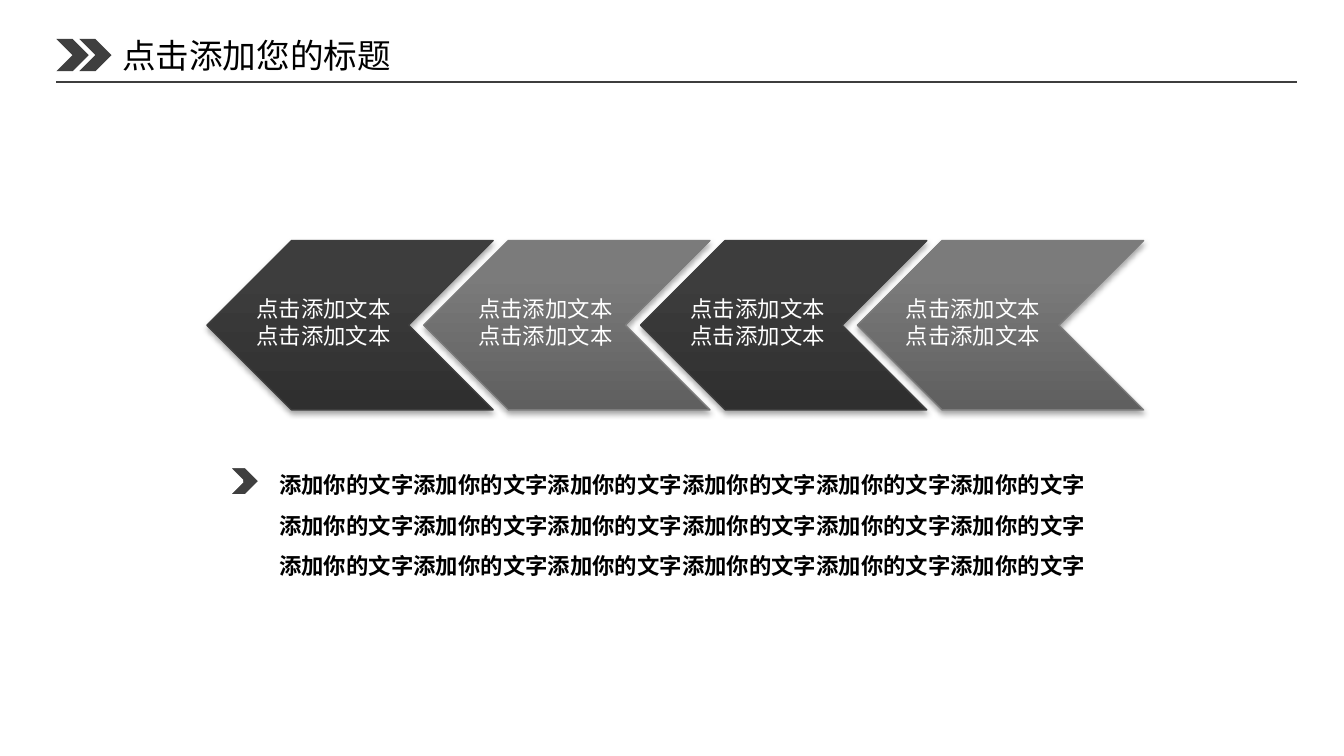
from lxml.etree import SubElement
from pptx import Presentation
from pptx.dml.color import RGBColor
from pptx.enum.shapes import MSO_CONNECTOR as Connector, MSO_SHAPE as Shape
from pptx.enum.text import MSO_AUTO_SIZE as AutoSize
from pptx.oxml.ns import qn
from pptx.util import Inches, Pt

FONT = "Noto Sans CJK SC"
COLORS = {
    "marker": "3F3F3F", "rule": "3E3E3E", "text": "000000", "white": "FFFFFF",
    "dark": "3D3D3D", "dark_low": "2F2F2F", "dark_edge": "3E3E3E",
    "gray": "7B7B7B", "gray_low": "5F5F5F", "gray_edge": "7C7C7C",
}


def color(name):
    return RGBColor.from_string(COLORS[name])


def add_text(page, left, top, width, height, lines, size,
             fill="text", bold=False, wrap=True, spacing=None):
    box = page.shapes.add_textbox(Inches(left), Inches(top), Inches(width), Inches(height))
    frame = box.text_frame
    frame.word_wrap = wrap
    frame.auto_size = AutoSize.SHAPE_TO_FIT_TEXT
    frame.text = "\n".join(lines)
    for para in frame.paragraphs:
        para.line_spacing = spacing
        for span in para.runs:
            span.font.size = Pt(size)
            span.font.bold = bold
            span.font.name = FONT
            span.font.color.rgb = color(fill)
            # East Asian typeface
            SubElement(span.font._element, qn("a:ea"), typeface=FONT)


def add_chevron(page, left, top, width, height):
    chevron = page.shapes.add_shape(
        Shape.CHEVRON, Inches(left), Inches(top), Inches(width), Inches(height))
    chevron.shadow.inherit = False
    return chevron


def add_marker(page, left, top, width, height, outlined=False):
    marker = add_chevron(page, left, top, width, height)
    marker.fill.solid()
    marker.fill.fore_color.rgb = color("marker")
    if outlined:
        marker.line.color.rgb = color("white")
        marker.line.width = Pt(2)
    else:
        marker.line.fill.background()


def add_drop_shadow(shape):
    effects = shape._element.spPr.find(qn("a:effectLst"))
    shadow = SubElement(effects, qn("a:outerShdw"), blurRad=str(Pt(3.1)),
                        dist=str(Pt(1.8)), dir="5400000", rotWithShape="0")
    tint = SubElement(shadow, qn("a:srgbClr"), val=COLORS["text"])
    SubElement(tint, qn("a:alpha"), val="35000")


def add_step(page, left, tone):
    step = add_chevron(page, left, 1.79, 2.13, 1.26)
    step._element.spPr.xfrm.set("flipH", "1")
    step.fill.gradient()
    step.fill.gradient_angle = 90
    stops = step.fill.gradient_stops
    for stop, position, name in zip(stops, (0, 0.8), (tone + "_low", tone)):
        stop.position = position
        stop.color.rgb = color(name)
    step.line.color.rgb = color(tone + "_edge")
    step.line.width = Pt(0.75)
    add_drop_shadow(step)


def add_rule(page, left, right, top):
    rule = page.shapes.add_connector(
        Connector.STRAIGHT, Inches(left), Inches(top), Inches(right), Inches(top))
    rule.line.color.rgb = color("rule")
    rule.line.width = Pt(0.75)
    SubElement(rule._element.spPr, qn("a:effectLst"))


def main():
    # Widescreen 16:9 page
    deck = Presentation()
    deck.slide_width = Inches(10)
    deck.slide_height = Inches(10) * 9 // 16
    page = deck.slides.add_slide(deck.slide_layouts[6])

    # Title bar
    for left in (0.42, 0.59):
        add_marker(page, left, 0.29, 0.24, 0.24)
    add_rule(page, 0.42, 9.65, 0.61)
    add_text(page, 0.81, 0.21, 2.22, 0.4, ["点击添加您的标题"], 18, wrap=False)

    # Row of left-pointing steps, then their labels on top
    first, last = 1.54, 6.38
    for index, tone in enumerate(("dark", "gray") * 2):
        add_step(page, first + index * (last - first) / 3, tone)
    for left in (1.81, 3.46, 5.04, 6.64):
        add_text(page, left, 2.15, 1.31, 0.5, ["点击添加文本" * 2], 12, fill="white")

    # Description
    add_text(page, 1.98, 3.36, 6.54, 1.01, ["添加你的文字" * 6] * 3, 12,
             bold=True, spacing=1.5)
    add_marker(page, 1.69, 3.47, 0.25, 0.22, outlined=True)

    deck.save("out.pptx")


if __name__ == "__main__":
    main()
